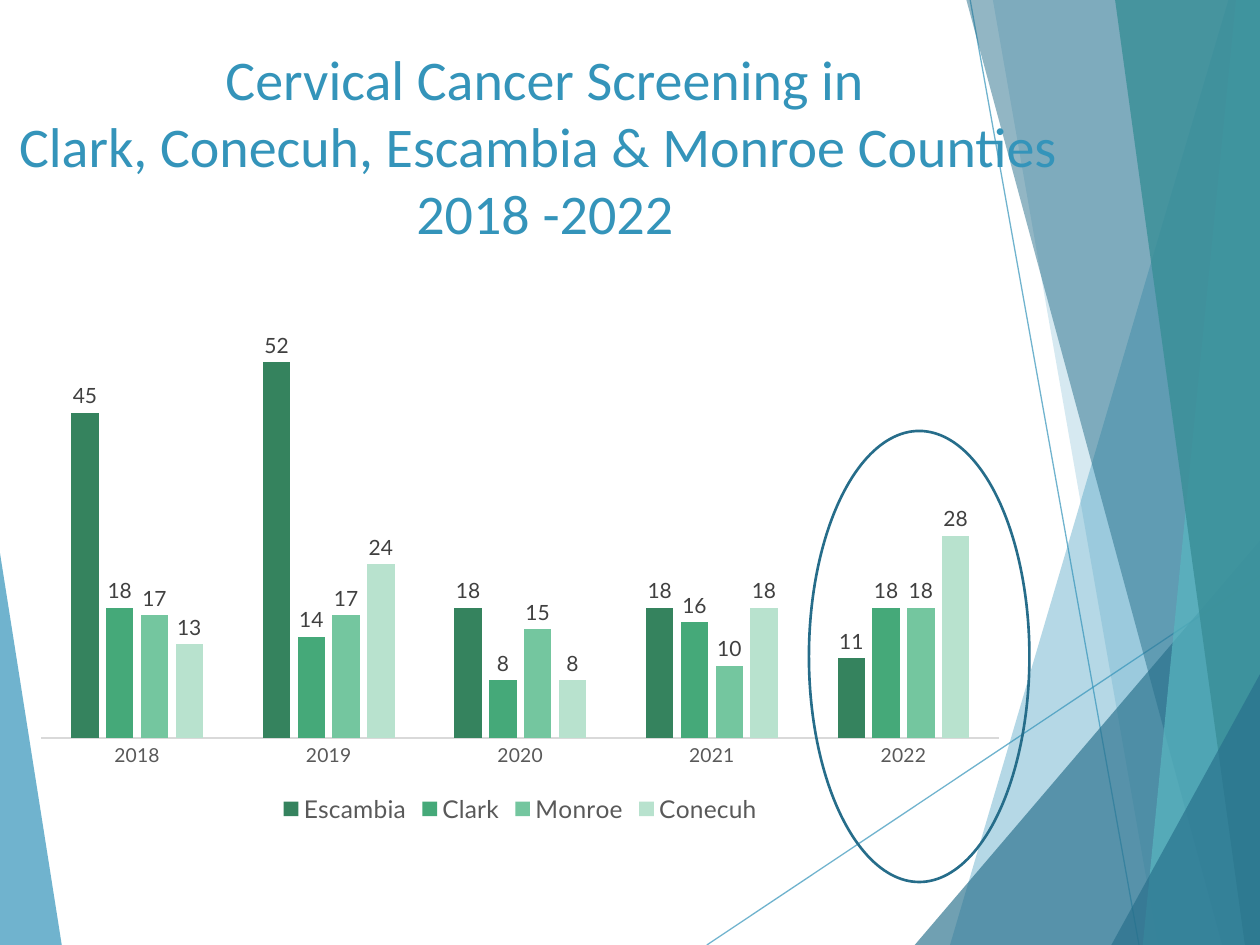
"""Build the county cervical cancer screening slide."""
import pptx
import pptx.chart.data
import pptx.dml.color
import pptx.enum.chart
import pptx.enum.shapes
import pptx.enum.text
import pptx.oxml.ns
import pptx.oxml.xmlchemy
import pptx.util

RGBColor = pptx.dml.color.RGBColor
Inches = pptx.util.Inches
Pt = pptx.util.Pt
OxmlElement = pptx.oxml.xmlchemy.OxmlElement

BLUE = RGBColor(0x34, 0x94, 0xBA)
NAVY = RGBColor(0x27, 0x6F, 0x8B)
AQUA = RGBColor(0x58, 0xB6, 0xC0)
TEAL = RGBColor(0x3A, 0x8F, 0x98)
OUTLINE = RGBColor(0x26, 0x6D, 0x8A)
AXIS_GRAY = RGBColor(0xD9, 0xD9, 0xD9)
TEXT_GRAY = RGBColor(0x59, 0x59, 0x59)
LABEL_GRAY = RGBColor(0x40, 0x40, 0x40)

WIDTH, HEIGHT = 10, 7.5
TITLE = "\v".join([
    "Cervical Cancer Screening in",
    "Clark, Conecuh, Escambia & Monroe Counties ",
    "2018 -2022",
])
YEARS = ["2018", "2019", "2020", "2021", "2022"]
COUNTIES = [
    ("Escambia", (45, 52, 18, 18, 11), RGBColor(0x35, 0x83, 0x5E)),
    ("Clark", (18, 14, 8, 16, 18), RGBColor(0x45, 0xA9, 0x79)),
    ("Monroe", (17, 17, 15, 10, 18), RGBColor(0x74, 0xC6, 0x9F)),
    ("Conecuh", (13, 24, 8, 18, 28), RGBColor(0xB8, 0xE2, 0xCE)),
]
PLOT_SHARES = {"x": 0.02, "y": 0.02, "w": 0.96, "h": 0.81}

LEFT_FACET = ([(0, 4.39), (0.49, HEIGHT), (0, HEIGHT)], BLUE, 70)
RAYS = [((5.61, HEIGHT), (WIDTH, 4.57)), ((7.7, 0), (9.04, HEIGHT))]
RIGHT_FACETS = [
    ((9.75, 0), (7.54, HEIGHT), BLUE, 36),
    ((7.88, 0), (9.19, HEIGHT), BLUE, 20),
    ((WIDTH, 4.29), (7.26, HEIGHT), NAVY, 66),
    ((7.67, 0), (9.7, HEIGHT), NAVY, 50),
    ((9.81, 0), (9.07, HEIGHT), AQUA, 70),
    ((8.85, 0), (9.88, HEIGHT), TEAL, 82),
    ((WIDTH, 5.35), (8.82, HEIGHT), NAVY, 66),
]


def set_opacity(element, percent):
    color = next(element.iter(pptx.oxml.ns.qn("a:srgbClr")))
    alpha = OxmlElement("a:alpha")
    alpha.set("val", str(percent * 1000))
    color.append(alpha)


def style_font(font, name, size, color):
    font.name, font.size = name, Pt(size)
    font.color.rgb = color


def add_facet(slide, points, color, opacity):
    corners = [(Inches(x), Inches(y)) for x, y in points]
    builder = slide.shapes.build_freeform(*corners[0], scale=1.0)
    builder.add_line_segments(corners[1:], close=True)
    shape = builder.convert_to_shape()
    shape.shadow.inherit = False
    shape.fill.solid()
    shape.fill.fore_color.rgb = color
    shape.line.fill.background()
    set_opacity(shape._element.spPr, opacity)


def add_ray(slide, start, end):
    connector = slide.shapes.add_connector(
        pptx.enum.shapes.MSO_CONNECTOR.STRAIGHT,
        *(Inches(value) for value in start + end))
    connector.line.color.rgb = BLUE
    connector.line.width = Pt(0.75)
    properties = connector._element.spPr
    set_opacity(properties, 70)
    properties.append(OxmlElement("a:effectLst"))


def add_backdrop(slide):
    add_facet(slide, *LEFT_FACET)
    for start, end in RAYS:
        add_ray(slide, start, end)
    for top, bottom, color, opacity in RIGHT_FACETS:
        points = [top, bottom, (WIDTH, HEIGHT)]
        if top[0] < WIDTH:
            points.append((WIDTH, top[1]))
        add_facet(slide, points, color, opacity)


def format_title(slide):
    title = slide.shapes.title
    title.left, title.top = Inches(0), Inches(0.3)
    title.width, title.height = Inches(8.65), Inches(1.28)
    frame = title.text_frame
    frame.text = TITLE
    frame.auto_size = pptx.enum.text.MSO_AUTO_SIZE.NONE
    frame.vertical_anchor = pptx.enum.text.MSO_ANCHOR.TOP
    paragraph = frame.paragraphs[0]
    paragraph.alignment = pptx.enum.text.PP_ALIGN.CENTER
    style_font(paragraph.font, "Calibri", 32, BLUE)
    slide.shapes._spTree.append(title._element)


def place_plot(chart):
    plot_area = chart._chartSpace.chart.plotArea
    for old in plot_area.findall(pptx.oxml.ns.qn("c:layout")):
        plot_area.remove(old)
    layout = OxmlElement("c:layout")
    manual = OxmlElement("c:manualLayout")
    settings = {"layoutTarget": "inner", "xMode": "edge", "yMode": "edge", **PLOT_SHARES}
    for tag, value in settings.items():
        setting = OxmlElement(f"c:{tag}")
        setting.set("val", str(value))
        manual.append(setting)
    layout.append(manual)
    plot_area.insert(0, layout)


def add_screening_chart(slide):
    data = pptx.chart.data.CategoryChartData()
    data.categories = YEARS
    for name, values, _ in COUNTIES:
        data.add_series(name, values)
    chart = slide.shapes.add_chart(
        pptx.enum.chart.XL_CHART_TYPE.COLUMN_CLUSTERED,
        Inches(0.17), Inches(2.33), Inches(7.92), Inches(4.25), data).chart
    chart.has_title = False
    chart.font.name, chart.font.size = "Lato", Pt(10)
    chart.has_legend = True
    chart.legend.position = pptx.enum.chart.XL_LEGEND_POSITION.BOTTOM
    chart.legend.include_in_layout = False
    style_font(chart.legend.font, "Lato", 14, TEXT_GRAY)

    years = chart.category_axis
    years.major_tick_mark = pptx.enum.chart.XL_TICK_MARK.NONE
    years.format.line.color.rgb = AXIS_GRAY
    years.format.line.width = Pt(0.75)
    style_font(years.tick_labels.font, "Lato", 11, TEXT_GRAY)
    counts = chart.value_axis
    counts.visible = counts.has_major_gridlines = False
    counts.minimum_scale, counts.maximum_scale = 0, 60

    plot = chart.plots[0]
    plot.gap_width, plot.overlap = 219, -27
    plot.vary_by_categories = False
    for series, (_, _, color) in zip(plot.series, COUNTIES):
        series.format.fill.solid()
        series.format.fill.fore_color.rgb = color
        labels = series.data_labels
        labels.show_value = True
        labels.position = pptx.enum.chart.XL_LABEL_POSITION.OUTSIDE_END
        style_font(labels.font, "Lato", 12, LABEL_GRAY)
    place_plot(chart)


def add_highlight(slide):
    ellipse = slide.shapes.add_shape(
        pptx.enum.shapes.MSO_SHAPE.OVAL,
        Inches(6.42), Inches(3.42), Inches(1.75), Inches(3.58))
    ellipse.shadow.inherit = False
    ellipse.fill.background()
    ellipse.line.color.rgb = OUTLINE
    ellipse.line.width = Pt(1.5)


def main():
    presentation = pptx.Presentation()
    presentation.slide_width, presentation.slide_height = Inches(WIDTH), Inches(HEIGHT)
    slide = presentation.slides.add_slide(presentation.slide_layouts[5])
    add_backdrop(slide)
    format_title(slide)
    add_screening_chart(slide)
    add_highlight(slide)
    presentation.save("out.pptx")


if __name__ == "__main__":
    main()
